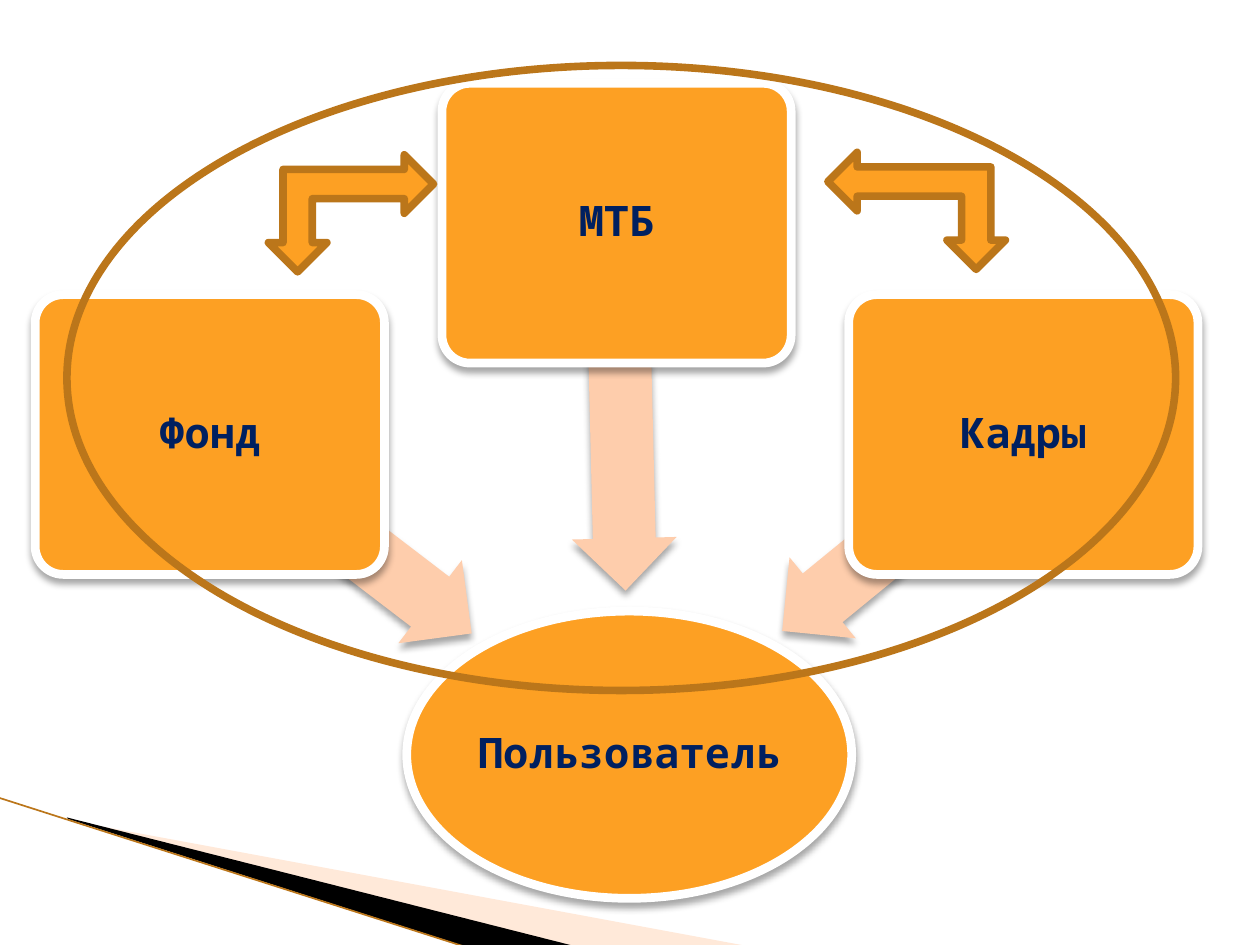
from lxml import etree
from pptx import Presentation
from pptx import util as u
from pptx.dml.color import RGBColor
from pptx.enum import shapes, text
from pptx.oxml import ns

Cm, Pt = u.Cm, u.Pt
Kind = shapes.MSO_SHAPE
GOLD, BROWN, PEACH, WHITE = "FDA023", "BB761A", "FECDAC", "FFFFFF"


def tint(part, hue):
    part.solid()
    part.fore_color.rgb = RGBColor.from_string(hue)


def draw(kind, x, y, w, h, fill=None, line=None, width=5, turn=0, label="", pad=0.3, shade=False):
    shp = page.add_shape(kind, Cm(x), Cm(y), Cm(w), Cm(h))
    shp.rotation = turn
    if fill:
        tint(shp.fill, fill)
    else:
        shp.fill.background()
    if line:
        tint(shp.line.fill, line)
        shp.line.width = Pt(width)
    else:
        shp.line.fill.background()
    shp.shadow.inherit = False
    if shade:
        fx = shp.element.spPr.find(ns.qn("a:effectLst"))
        cast = etree.SubElement(fx, ns.qn("a:outerShdw"), blurRad=str(Pt(4)),
                                dist=str(Pt(3)), dir="5400000", rotWithShape="0")
        dark = etree.SubElement(cast, ns.qn("a:srgbClr"), val="000000")
        etree.SubElement(dark, ns.qn("a:alpha"), val="35000")
    if label:
        frame = shp.text_frame
        frame.word_wrap = True
        frame.vertical_anchor = text.MSO_ANCHOR.MIDDLE
        frame.margin_left = frame.margin_right = Cm(pad)
        frame.margin_top = frame.margin_bottom = Cm(pad)
        para = frame.paragraphs[0]
        para.text = label
        para.alignment = text.PP_ALIGN.CENTER
        para.line_spacing = 0.9
        para.font.name = "Noto Sans Mono"
        para.font.size = Pt(24)
        para.font.bold = True
        para.font.color.rgb = RGBColor.from_string("002060")
    return shp


deck = Presentation()
deck.slide_width, deck.slide_height = Cm(25.4), Cm(19.05)
page = deck.slides.add_slide(deck.slide_layouts[6]).shapes

wedges = [
    ("FFC8A2", 40, [(1.4, 16.54), (15.11, 19.08), (11.58, 19.08), (1.4, 16.51)]),
    ("000000", 100, [(1.35, 16.48), (11.61, 19.08), (9.45, 19.1), (1.37, 16.51)]),
]
for hue, alpha, dots in wedges:
    dots = [(Cm(x), Cm(y)) for x, y in dots]
    pen = page.build_freeform(*dots[0])
    pen.add_line_segments(dots[1:], close=True)
    wedge = pen.convert_to_shape()
    tint(wedge.fill, hue)
    wedge.line.fill.background()
    wedge.shadow.inherit = False
    if alpha < 100:
        clr = wedge.element.spPr.find(".//" + ns.qn("a:srgbClr"))
        etree.SubElement(clr, ns.qn("a:alpha"), val=str(alpha * 1000))

edge = page.add_connector(shapes.MSO_CONNECTOR.STRAIGHT, Cm(-0.03), Cm(16.08), Cm(9.42), Cm(19.1))
tint(edge.line.fill, BROWN)
edge.line.width = Pt(0.95)
etree.SubElement(edge.element.spPr, ns.qn("a:effectLst"))

draw(Kind.OVAL, 8.2, 12.32, 8.97, 5.79, GOLD, WHITE, label="Пользователь", pad=0.05, shade=True)

nodes = [
    ("Фонд", 5.94, (3.56, 9.7, 6.63), 217.4),
    ("МТБ", 1.68, (8.81, 7.14, 7.42), 268.6),
    ("Кадры", 5.94, (15.06, 9.68, 6.27), 320.7),
]
for col, (name, top, place, turn) in enumerate(nodes):
    arrow = draw(Kind.LEFT_ARROW, *place, 2.11, PEACH, turn=turn, shade=True)
    arrow.adjustments[0] = 0.6
    arrow.adjustments[1] = 0.5
    box = draw(Kind.ROUNDED_RECTANGLE, 0.71 + 8.2 * col, top, 7.04, 5.64, GOLD, WHITE,
               label=name, shade=True)
    box.adjustments[0] = 0.1

draw(Kind.LEFT_UP_ARROW, 5.41, 3.12, 3.33, 2.36, GOLD, BROWN, 4.33, 180)
draw(Kind.LEFT_UP_ARROW, 17.3, 2.46, 2.36, 3.58, GOLD, BROWN, 4.33, 270)
draw(Kind.OVAL, 1.35, 1.32, 22.35, 12.6, line=BROWN, width=4.33)

deck.save("out.pptx")
